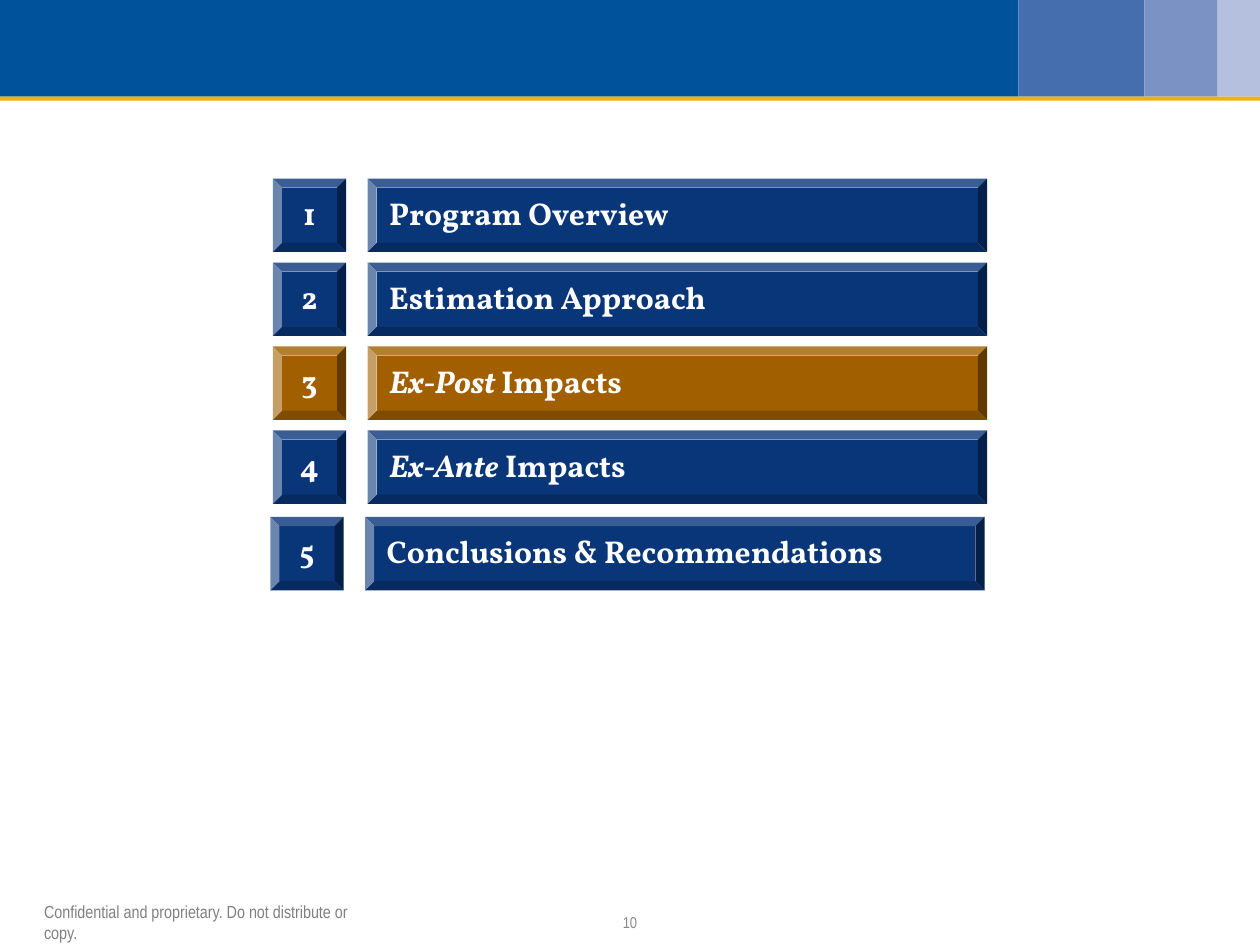
from pptx import Presentation
from pptx.dml.color import RGBColor
from pptx.enum.shapes import MSO_SHAPE
from pptx.enum.text import MSO_ANCHOR, PP_ALIGN
from pptx.util import Cm, Pt

RECT, BEVEL = MSO_SHAPE.RECTANGLE, MSO_SHAPE.BEVEL
LEFT, CENTER = PP_ALIGN.LEFT, PP_ALIGN.CENTER
MIDDLE = MSO_ANCHOR.MIDDLE
WHITE = RGBColor(0xFF, 0xFF, 0xFF)
BLUE = RGBColor(0x00, 0x53, 0x9B)
STEEL = RGBColor(0x44, 0x6E, 0xAE)
MIST = RGBColor(0x7B, 0x92, 0xC5)
PALE = RGBColor(0xB5, 0xC0, 0xDF)
GOLD = RGBColor(0xEE, 0xB1, 0x11)
NAVY = RGBColor(0x09, 0x36, 0x78)
BROWN = RGBColor(0xA1, 0x5F, 0x00)
GREY = RGBColor(0x80, 0x80, 0x80)
SILVER = RGBColor(0x89, 0x89, 0x89)
SERIF, NARROW = "Vollkorn", "Arial Narrow"

TOPICS = [
    [("Program Overview", False)],
    [("Estimation Approach", False)],
    [("Ex-Post ", True), ("Impacts", False)],
    [("Ex-Ante", True), (" Impacts", False)],
    [("Conclusions & Recommendations", False)],
]
ACTIVE = 3


def add_block(slide, kind, box, fill):
    """Add a plain filled shape without line or shadow."""
    shape = slide.shapes.add_shape(kind, *map(Cm, box))
    shape.shadow.inherit = False
    shape.fill.solid()
    shape.fill.fore_color.rgb = fill
    shape.line.fill.background()
    return shape


def set_text(shape, runs, font, size, color, align=LEFT, bold=False, side=0, wrap=True):
    """Write one paragraph of (text, italic) runs into a shape."""
    frame = shape.text_frame
    frame.word_wrap = wrap
    frame.vertical_anchor = MIDDLE
    frame.margin_left = frame.margin_right = Cm(side)
    frame.margin_top = frame.margin_bottom = Cm(0)
    para = frame.paragraphs[0]
    para.alignment = align
    for text, slant in runs:
        run = para.add_run()
        run.text = text
        run.font.name = font
        run.font.size = Pt(size)
        run.font.bold = bold
        run.font.italic = slant
        run.font.color.rgb = color
    return para


def add_header(slide, left, top, width, height):
    """Draw the banded header with its gold rule."""
    rule = 0.08
    edges = [0, 20.53, 23.07, 24.55, width]
    for start, end, fill in zip(edges, edges[1:], (BLUE, STEEL, MIST, PALE)):
        add_block(slide, RECT, (left + start, top, end - start, height - rule), fill)
    add_block(slide, RECT, (left, top + height - rule, width, rule), GOLD)


def add_topic(slide, left, top, width, height, number, runs):
    """Draw one agenda row: a square number tile and a title bar."""
    fill = BROWN if number == ACTIVE else NAVY
    shift = height + 0.43
    parts = [
        ((left, top, height, height), [(str(number), False)], CENTER),
        ((left + shift, top, width - shift, height), runs, LEFT),
    ]
    for box, words, align in parts:
        tile = add_block(slide, BEVEL, box, fill)
        tile.adjustments[0] = 0.125
        para = set_text(tile, words, SERIF, 18, WHITE, align, True, 0.25)
        para.line_spacing = 0.9


def add_agenda(slide, left, top, width, height):
    """Stack the agenda rows, the last one nudged left and down."""
    row = 1.48
    nudge = 0.05
    pitch = (height - row - nudge) / (len(TOPICS) - 1)
    for index, runs in enumerate(TOPICS):
        move = nudge if index == len(TOPICS) - 1 else 0
        add_topic(slide, left - move, top + index * pitch + move,
                  width, row, index + 1, runs)


def add_footer(slide, left, top, width, height):
    """Place the notice at the left and the page number in the middle."""
    page = 0.34
    middle = left + (width - page) / 2
    parts = [
        (left, 6.3, "Confidential and proprietary. Do not distribute or copy.", 10, GREY, LEFT),
        (middle, page, "10", 9, SILVER, CENTER),
    ]
    for start, span, text, size, color, align in parts:
        box = slide.shapes.add_textbox(Cm(start), Cm(top), Cm(span), Cm(height))
        set_text(box, [(text, False)], NARROW, size, color, align, wrap=False)


def main():
    """Build and save the agenda slide."""
    deck = Presentation()
    deck.slide_width, deck.slide_height = Cm(25.4), Cm(19.05)
    slide = deck.slides.add_slide(deck.slide_layouts[6])
    add_header(slide, 0, 0, 25.4, 2.03)
    add_agenda(slide, 5.5, 3.6, 14.4, 8.3)
    add_footer(slide, 0.89, 18.39, 23.62, 0.39)
    deck.save("out.pptx")


if __name__ == "__main__":
    main()
